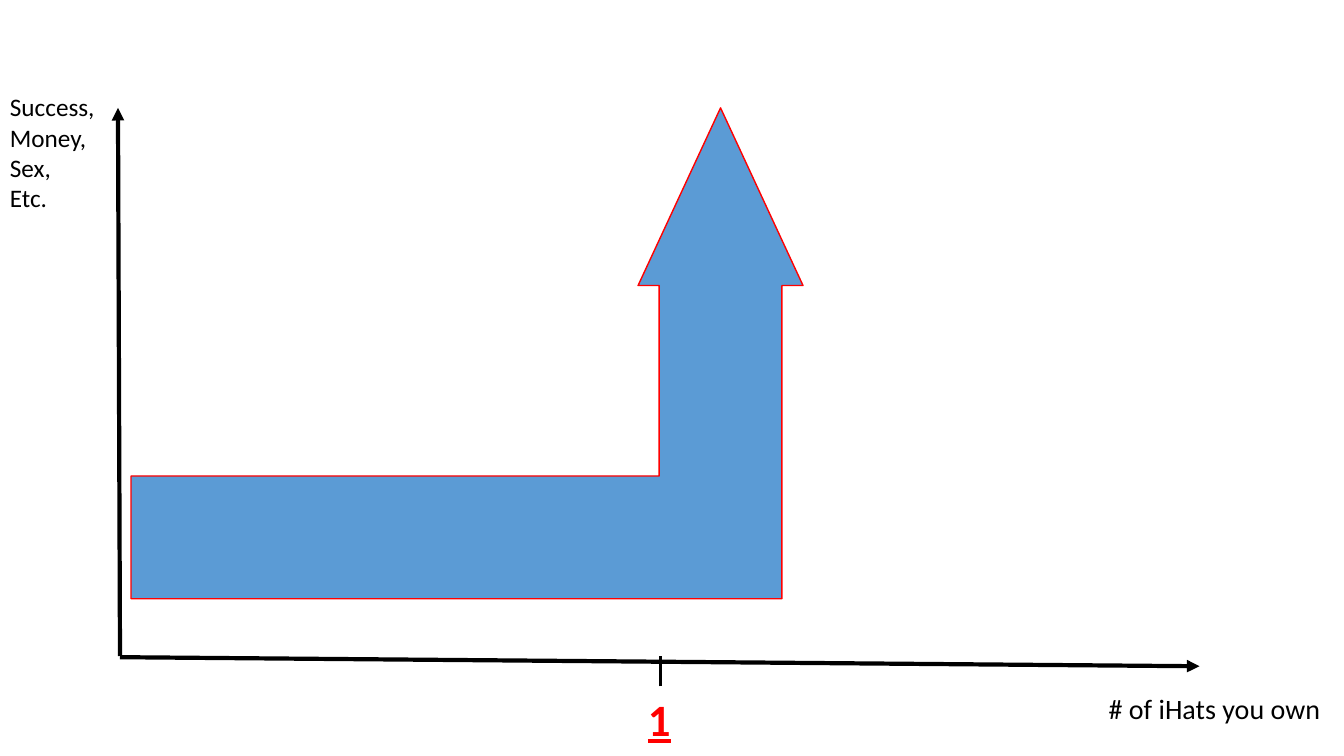
from dataclasses import dataclass

from lxml import etree
from pptx import Presentation
from pptx import util as u
from pptx.dml.color import RGBColor
from pptx.enum import shapes, text
from pptx.oxml.ns import qn
from pptx.slide import Slide

SLIDE_WIDTH, SLIDE_HEIGHT = u.Inches(13.33), u.Inches(7.5)


@dataclass(frozen=True)
class Theme:
    font: str = "Calibri"
    ink: RGBColor = RGBColor(0x00, 0x00, 0x00)
    accent: RGBColor = RGBColor(0xFF, 0x00, 0x00)
    growth: RGBColor = RGBColor(0x5B, 0x9B, 0xD5)
    small: float = 18
    medium: float = 20
    large: float = 32
    axis_width: float = 3
    tick_width: float = 2.25
    outline_width: float = 1


THEME = Theme()


# Positions and sizes are percentages of the slide's width and height
@dataclass(frozen=True)
class Stroke:
    start: tuple[float, float]
    end: tuple[float, float]
    width: float
    arrow: bool = False


@dataclass(frozen=True)
class Label:
    box: tuple[float, float, float, float]
    lines: tuple[str, ...]
    size: float
    color: RGBColor = THEME.ink
    align: text.PP_ALIGN = text.PP_ALIGN.LEFT
    emphasis: bool = False


STROKES = (
    Stroke((8.93, 86.93), (89.25, 88.13), THEME.axis_width, arrow=True),
    Stroke((8.93, 86.8), (8.78, 14.27), THEME.axis_width, arrow=True),
    Stroke((49.13, 90.8), (49.13, 86.8), THEME.tick_width),
)
GROWTH_BOX = (9.75, 14.27, 50, 64.93)
GROWTH_ADJUSTMENTS = (0.25, 0.168, 0.362)
LABELS = (
    Label((81.75, 90.8, 17.4, 5.87), ("# of iHats you own",), THEME.medium),
    Label((0, 11.47, 7.8, 17.47), ("Success,", "Money,", "Sex,", "Etc."), THEME.small),
    Label((46.65, 90.8, 4.8, 8.53), ("1",), THEME.large, THEME.accent,
          text.PP_ALIGN.CENTER, emphasis=True),
)


def across(percent: float) -> int:
    return round(SLIDE_WIDTH * percent / 100)


def down(percent: float) -> int:
    return round(SLIDE_HEIGHT * percent / 100)


def place(box: tuple[float, float, float, float]) -> tuple[int, int, int, int]:
    left, top, width, height = box
    return across(left), down(top), across(width), down(height)


def draw_stroke(slide: Slide, stroke: Stroke) -> None:
    (x1, y1), (x2, y2) = stroke.start, stroke.end
    axis = slide.shapes.add_connector(
        shapes.MSO_CONNECTOR.STRAIGHT, across(x1), down(y1), across(x2), down(y2))
    axis.line.color.rgb = THEME.ink
    axis.line.width = u.Pt(stroke.width)
    if stroke.arrow:
        etree.SubElement(axis.line._get_or_add_ln(), qn("a:tailEnd"), type="triangle")
    etree.SubElement(axis._element.spPr, qn("a:effectLst"))


def draw_growth(slide: Slide) -> None:
    growth = slide.shapes.add_shape(shapes.MSO_SHAPE.BENT_UP_ARROW, *place(GROWTH_BOX))
    for index, adjustment in enumerate(GROWTH_ADJUSTMENTS):
        growth.adjustments[index] = adjustment
    growth.shadow.inherit = False
    growth.fill.solid()
    growth.fill.fore_color.rgb = THEME.growth
    growth.line.color.rgb = THEME.accent
    growth.line.width = u.Pt(THEME.outline_width)


def draw_label(slide: Slide, label: Label) -> None:
    frame = slide.shapes.add_textbox(*place(label.box)).text_frame
    frame.word_wrap = False
    frame.auto_size = text.MSO_AUTO_SIZE.SHAPE_TO_FIT_TEXT
    for index, line in enumerate(label.lines):
        paragraph = frame.add_paragraph() if index else frame.paragraphs[0]
        paragraph.alignment = label.align
        run = paragraph.add_run()
        run.text = line
        run.font.name = THEME.font
        run.font.size = u.Pt(label.size)
        run.font.color.rgb = label.color
        run.font.bold = run.font.underline = label.emphasis


def main() -> None:
    deck = Presentation()
    deck.slide_width, deck.slide_height = SLIDE_WIDTH, SLIDE_HEIGHT
    slide = deck.slides.add_slide(deck.slide_layouts[6])

    # Axes, then the growth arrow, with the tick on top
    *axes, tick = STROKES
    for axis in axes:
        draw_stroke(slide, axis)
    draw_growth(slide)
    draw_stroke(slide, tick)

    # Axis titles and the tick's value
    for label in LABELS:
        draw_label(slide, label)

    deck.save("out.pptx")


if __name__ == "__main__":
    main()
